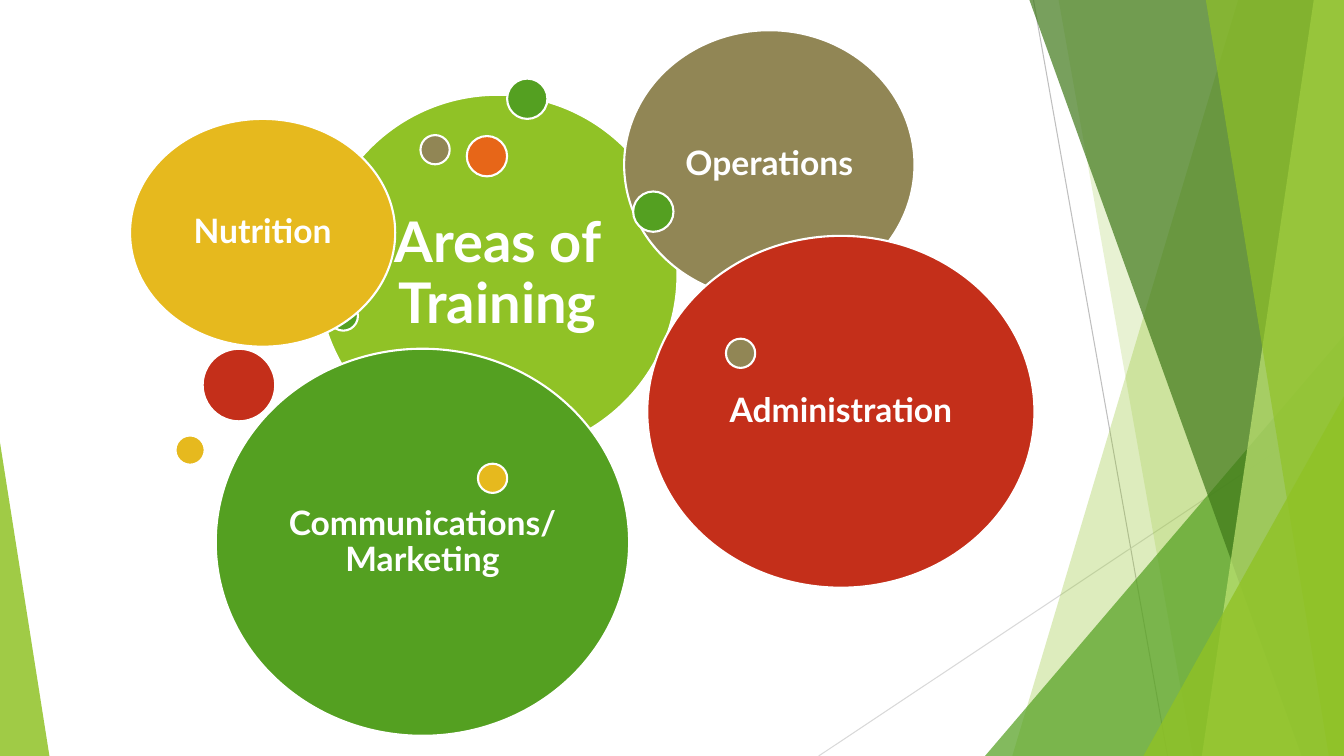
import pptx
import pptx.util
import pptx.dml.color
import pptx.enum.shapes
import pptx.enum.text
import pptx.oxml
import pptx.oxml.ns

PX = 9144
SLIDE_WIDTH, SLIDE_HEIGHT = 1333, 750
FONT = "Lato"
WHITE, LIME, GREEN, DARK_GREEN, PALE_LIME = "FFFFFF", "90C226", "54A021", "3F7819", "C0E474"
GOLD, ORANGE, RED, OLIVE = "E6B91E", "E76618", "C42F1A", "918655"
SMALL, MEDIUM, LARGE = 29, 40, 72

BUBBLES = [
    (186, 64, 357, 357, LIME, "Areas of Training", 40, 17),
    (374, 48, MEDIUM, MEDIUM, GREEN),
    (288, 104, SMALL, SMALL, OLIVE),
    (197, 269, SMALL, SMALL, GREEN),
    (0, 88, 263, 226, GOLD, "Nutrition"),
    (334, 105, MEDIUM, MEDIUM, ORANGE),
    (72, 316, LARGE, LARGE, RED),
    (490, 0, 288, 267, OLIVE, "Operations"),
    (499, 160, MEDIUM, MEDIUM, GREEN),
    (45, 402, SMALL, SMALL, GOLD),
    (513, 204, 384, 349, RED, "Administration"),
    (591, 306, SMALL, SMALL, OLIVE),
    (85, 316, 410, 384, GREEN, "Communications/Marketing"),
    (345, 430, SMALL, SMALL, GOLD),
]


def color(value):
    return pptx.dml.color.RGBColor.from_string(value)


def px(*lengths):
    return [pptx.util.Emu(length * PX) for length in lengths]


def paint(shape, fill, opacity=100):
    shape.shadow.inherit = False
    shape.fill.solid()
    shape.fill.fore_color.rgb = color(fill)
    shape.line.fill.background()
    if opacity < 100:
        tint = shape._element.spPr.find(".//" + pptx.oxml.ns.qn("a:srgbClr"))
        alpha = pptx.oxml.parse_xml(
            f'<a:alpha {pptx.oxml.ns.nsdecls("a")} val="{opacity * 1000}"/>')
        tint.append(alpha)


def add_line(slide, start, end, stroke):
    connector = slide.shapes.add_connector(
        pptx.enum.shapes.MSO_CONNECTOR.STRAIGHT, *px(*start, *end))
    connector.line.color.rgb = color(stroke)
    connector.line.width = pptx.util.Pt(0.75)
    connector._element.spPr.append(
        pptx.oxml.parse_xml(f'<a:effectLst {pptx.oxml.ns.nsdecls("a")}/>'))


def add_facet(slide, box, top_x, bottom_x, fill, opacity):
    left, top, width, height = box
    right, bottom = left + width, top + height
    builder = slide.shapes.build_freeform(left + top_x, top, scale=PX)
    builder.add_line_segments(
        [(right, top), (right, bottom), (left + bottom_x, bottom)], close=True)
    paint(builder.convert_to_shape(), fill, opacity)


def add_triangle(slide, box, apex, fill, opacity):
    triangle = slide.shapes.add_shape(
        pptx.enum.shapes.MSO_SHAPE.ISOSCELES_TRIANGLE, *px(*box))
    triangle.adjustments[0] = apex
    paint(triangle, fill, opacity)


def add_right_facets(slide, box):
    left, top, width, height = box
    right, bottom = left + width, top + height
    add_line(slide, (left + 213, top), (left + 346, bottom), "BFBFBF")
    add_line(slide, (right, top + 403), (left, bottom), "D9D9D9")
    add_facet(slide, box, 416, 192, LIME, 30)
    add_facet(slide, box, 238, 371, LIME, 20)
    add_triangle(slide, (right - 356, bottom - 417, 356, 417), 1, GREEN, 72)
    add_facet(slide, box, 209, 479, DARK_GREEN, 70)
    add_facet(slide, box, 491, 380, PALE_LIME, 70)
    add_facet(slide, box, 384, 506, LIME, 65)
    add_triangle(slide, (right - 199, bottom - 357, 199, 357), 1, LIME, 80)


def write_label(shape, label, size, inset):
    frame = shape.text_frame
    frame.text = label
    frame.word_wrap = True
    frame.vertical_anchor = pptx.enum.text.MSO_ANCHOR.MIDDLE
    for side in ("left", "top", "right", "bottom"):
        setattr(frame, f"margin_{side}", px(inset)[0])
    paragraph = frame.paragraphs[0]
    paragraph.alignment = pptx.enum.text.PP_ALIGN.CENTER
    paragraph.line_spacing = 0.9
    font = paragraph.runs[0].font
    font.name = FONT
    font.size = pptx.util.Pt(size)
    font.bold = True
    font.color.rgb = color(WHITE)


def add_bubble(slide, box, fill, label=None, size=24, inset=10):
    bubble = slide.shapes.add_shape(pptx.enum.shapes.MSO_SHAPE.OVAL, *px(*box))
    paint(bubble, fill)
    bubble.line.color.rgb = color(WHITE)
    bubble.line.width = pptx.util.Pt(1.5)
    if label:
        write_label(bubble, label, size, inset)


def add_training_areas(slide, left, top):
    for x, y, width, height, *style in BUBBLES:
        add_bubble(slide, (left + x, top + y, width, height), *style)


def main():
    presentation = pptx.Presentation()
    presentation.slide_width, presentation.slide_height = px(SLIDE_WIDTH, SLIDE_HEIGHT)
    slide = presentation.slides.add_slide(presentation.slide_layouts[6])
    add_right_facets(slide, (812, 0, SLIDE_WIDTH - 812, SLIDE_HEIGHT))
    add_triangle(slide, (0, SLIDE_HEIGHT - 311, 49, 311), 0, LIME, 85)
    add_training_areas(slide, 129, 30)
    presentation.save("out.pptx")


if __name__ == "__main__":
    main()
